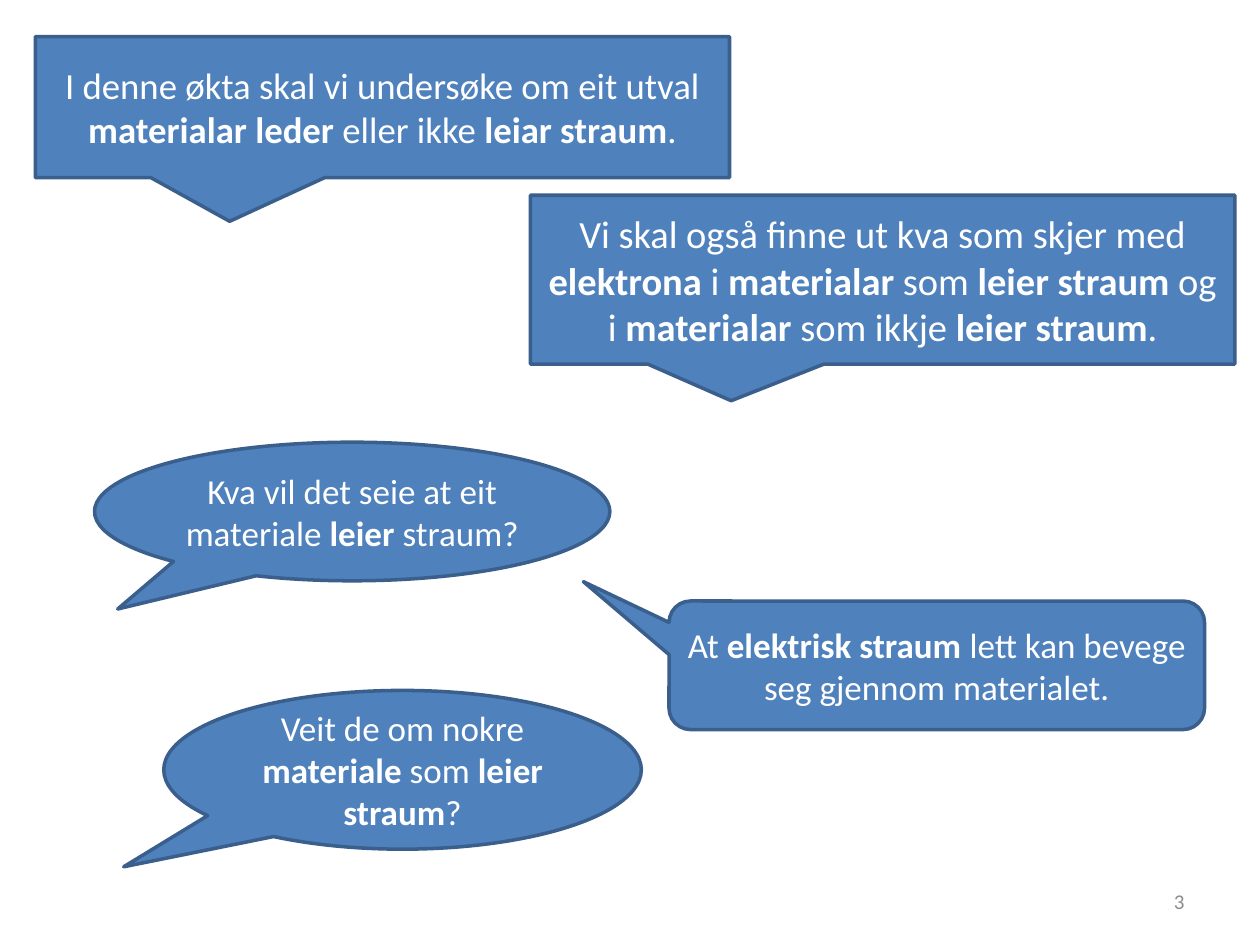
from pptx import Presentation
from pptx.dml.color import RGBColor
from pptx.enum.shapes import MSO_SHAPE as Shape
from pptx.enum.text import MSO_ANCHOR as Anchor, PP_ALIGN as Align
from pptx.util import Inches, Pt

COLORS = {
    "bubble": "4F81BD",
    "outline": "3A5F8C",
    "speech": "FFFFFF",
    "number": "8C8C8C",
}
FONT = "Calibri"

BUBBLES = [
    (Shape.OVAL_CALLOUT, (0.75, 3.51, 4.09, 1.1), (-0.455, 0.704), 20,
     "Kva vil det seie at eit materiale *leier *straum?"),
    (Shape.OVAL_CALLOUT, (1.3, 5.48, 3.79, 1.26), (-0.584, 0.611), 20,
     "Veit de om nokre *materiale* som *leier straum*?"),
    (Shape.RECTANGULAR_CALLOUT, (0.28, 0.29, 5.51, 1.12), (-0.22, 0.809), 21,
     "I denne økta skal vi undersøke om eit utval *materialar leder*"
     " eller ikke *leiar straum*."),
    (Shape.RECTANGULAR_CALLOUT, (4.21, 1.55, 5.59, 1.34), (-0.215, 0.717), 22,
     "Vi skal også finne ut kva som skjer med *elektrona *i *materialar *som "
     "*leier straum *og i *materialar *som ikkje *leier straum*."),
    (Shape.ROUNDED_RECTANGULAR_CALLOUT, (5.31, 4.77, 4.25, 1.02),
     (-0.66, -0.651, 0.167), 20,
     "At *elektrisk straum *lett kan bevege seg gjennom materialet."),
]


def color(name):
    return RGBColor.from_string(COLORS[name])


def write(frame, marked_text, size, ink, align):
    frame.word_wrap = True
    frame.vertical_anchor = Anchor.MIDDLE
    paragraph = frame.paragraphs[0]
    paragraph.alignment = align
    paragraph.font.name = FONT
    paragraph.font.size = Pt(size)
    paragraph.font.color.rgb = color(ink)
    for index, words in enumerate(marked_text.split("*")):
        run = paragraph.add_run()
        run.text = words
        if index % 2:
            run.font.bold = True


def add_bubble(slide, outline, box, pointer, size, marked_text):
    bubble = slide.shapes.add_shape(outline, *map(Inches, box))
    for index, value in enumerate(pointer):
        bubble.adjustments[index] = value
    bubble.shadow.inherit = False
    bubble.fill.solid()
    bubble.fill.fore_color.rgb = color("bubble")
    bubble.line.color.rgb = color("outline")
    bubble.line.width = Pt(2)
    write(bubble.text_frame, marked_text, size, "speech", Align.CENTER)


def add_page_number(slide, number):
    box = map(Inches, (7.17, 6.95, 2.33, 0.4))
    page_number = slide.shapes.add_textbox(*box)
    write(page_number.text_frame, number, 12, "number", Align.RIGHT)


def main():
    deck = Presentation()
    deck.slide_width = Inches(10)
    deck.slide_height = Inches(7.5)
    slide = deck.slides.add_slide(deck.slide_layouts[6])
    for bubble in BUBBLES:
        add_bubble(slide, *bubble)
    add_page_number(slide, "3")
    deck.save("out.pptx")


if __name__ == "__main__":
    main()
